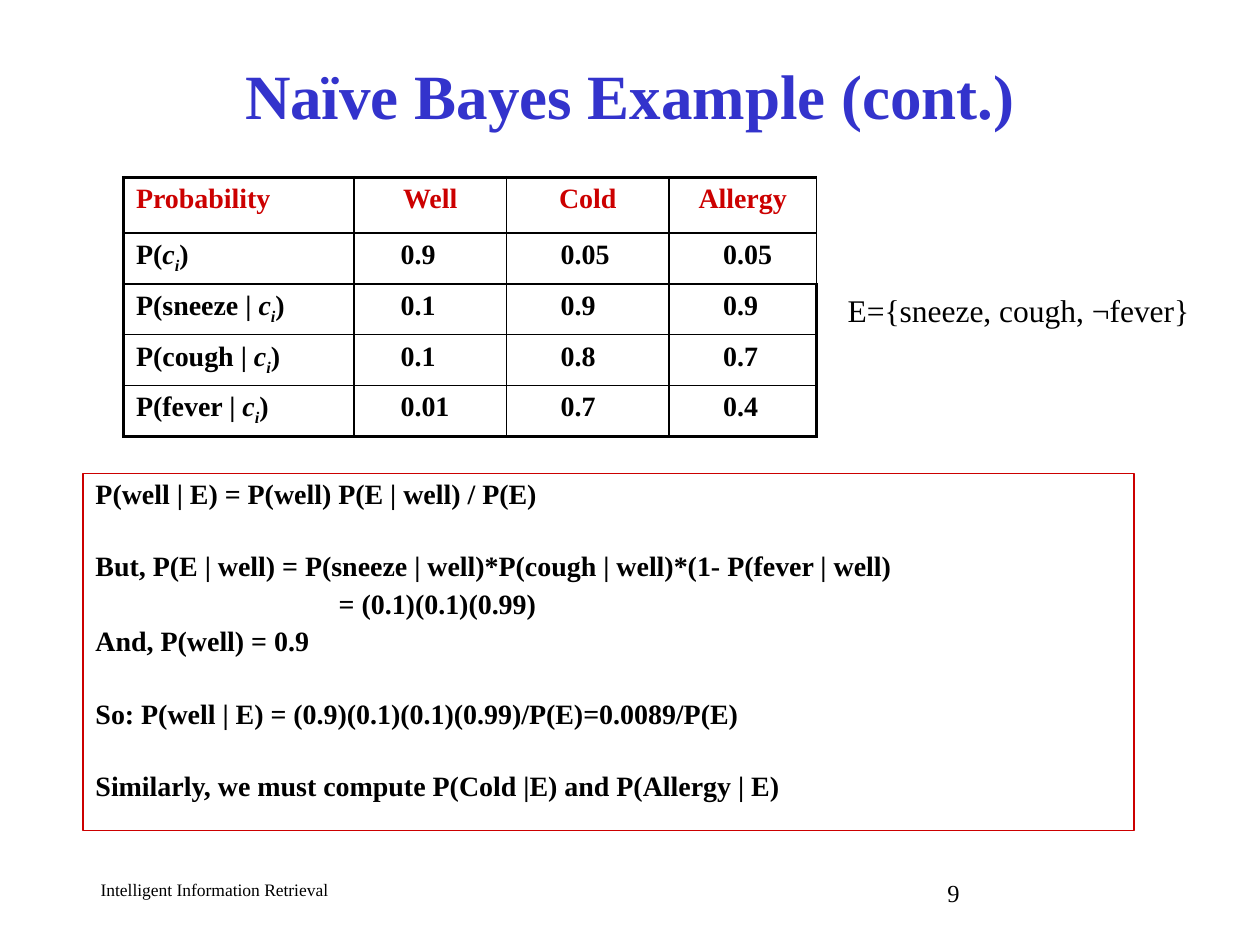
from lxml import etree
from pptx import Presentation
from pptx.dml.color import RGBColor
from pptx.enum.shapes import MSO_SHAPE
from pptx.enum.text import MSO_ANCHOR, PP_ALIGN
from pptx.oxml.ns import qn
from pptx.util import Inches, Pt

RECTANGLE = MSO_SHAPE.RECTANGLE
TOP, MIDDLE = MSO_ANCHOR.TOP, MSO_ANCHOR.MIDDLE
LEFT, CENTER = PP_ALIGN.LEFT, PP_ALIGN.CENTER

FONT = "Times New Roman"
COLORS = {"text": "000000", "title": "3333CC", "accent": "CC0000"}
BODY_SIZE = 16
THIN, THICK = 1, 2.25

COLUMN_WIDTHS = [1.83, 1.21, 1.29, 1.17]
ROW_HEIGHTS = [0.44, 0.38, 0.38, 0.38, 0.39]
VALUE_INSETS = [0.37, 0.43, 0.43]
HEADERS = ["Probability", "Well", "Cold", "Allergy"]
PROBABILITIES = [
    ("P(", ["0.9", "0.05", "0.05"]),
    ("P(sneeze | ", ["0.1", "0.9", "0.9"]),
    ("P(cough | ", ["0.1", "0.8", "0.7"]),
    ("P(fever | ", ["0.01", "0.7", "0.4"]),
]

# Each line: text, left indent in inches, space before in points
LINE_GAP, BLOCK_GAP = 3.9, 24.4
DERIVATION = [
    ("P(well | E) = P(well) P(E | well) / P(E)", 0, 0),
    ("But, P(E | well) = P(sneeze | well)*P(cough | well)*(1- P(fever | well)", 0, BLOCK_GAP),
    ("= (0.1)(0.1)(0.99)", 1.93, LINE_GAP),
    ("And, P(well) = 0.9", 0, LINE_GAP),
    ("So: P(well | E) = (0.9)(0.1)(0.1)(0.99)/P(E)=0.0089/P(E)", 0, BLOCK_GAP),
    ("Similarly, we must compute P(Cold |E) and P(Allergy | E)", 0, BLOCK_GAP),
]


def add_run(paragraph, text, size, color="text", bold=False, italic=False, baseline=None):
    run = paragraph.add_run()
    run.text = text
    font = run.font
    font.name, font.size, font.bold, font.italic = FONT, Pt(size), bold, italic
    font.color.rgb = RGBColor.from_string(COLORS[color])
    if baseline is not None:
        font._element.set("baseline", str(baseline * 1000))


def add_label(slide, box, text, size, color="text", bold=False,
              align=LEFT, anchor=TOP, wrap=True):
    shape = slide.shapes.add_textbox(*map(Inches, box))
    frame = shape.text_frame
    frame.word_wrap = wrap
    frame.vertical_anchor = anchor
    paragraph = frame.paragraphs[0]
    paragraph.alignment = align
    add_run(paragraph, text, size, color, bold)


def set_borders(cell, widths):
    """Draw the cell edges; widths maps L, R, T and B to points."""
    properties = cell._tc.get_or_add_tcPr()
    for side, width in widths.items():
        line = etree.SubElement(properties, qn(f"a:ln{side}"), w=str(Pt(width)))
        fill = etree.SubElement(line, qn("a:solidFill"))
        etree.SubElement(fill, qn("a:srgbClr"), val=COLORS["text"])


def add_probability_table(slide, box):
    rows, columns = len(ROW_HEIGHTS), len(COLUMN_WIDTHS)
    table = slide.shapes.add_table(rows, columns, *map(Inches, box)).table
    for column, width in zip(table.columns, COLUMN_WIDTHS):
        column.width = Inches(width)
    for row, height in zip(table.rows, ROW_HEIGHTS):
        row.height = Inches(height)

    for column, header in enumerate(HEADERS):
        paragraph = table.cell(0, column).text_frame.paragraphs[0]
        paragraph.alignment = CENTER if column else LEFT
        add_run(paragraph, header, BODY_SIZE, "accent", bold=True)

    for row, (prefix, values) in enumerate(PROBABILITIES, start=1):
        paragraph = table.cell(row, 0).text_frame.paragraphs[0]
        add_run(paragraph, prefix, BODY_SIZE, bold=True)
        add_run(paragraph, "c", BODY_SIZE, bold=True, italic=True)
        add_run(paragraph, "i", BODY_SIZE, bold=True, italic=True, baseline=-25)
        add_run(paragraph, ")", BODY_SIZE, bold=True)
        for column, value in enumerate(values, start=1):
            cell = table.cell(row, column)
            cell.margin_left = Inches(VALUE_INSETS[column - 1])
            add_run(cell.text_frame.paragraphs[0], value, BODY_SIZE, bold=True)

    for row in range(rows):
        for column in range(columns):
            cell = table.cell(row, column)
            thick_right = column == columns - 1 and row > 1
            set_borders(cell, {
                "L": THIN if column else THICK,
                "R": THICK if thick_right else THIN,
                "T": THIN if row else THICK,
                "B": THICK if row == rows - 1 else THIN,
            })
            cell.fill.background()


def add_derivation(slide, box):
    shape = slide.shapes.add_shape(RECTANGLE, *map(Inches, box))
    shape.shadow.inherit = False
    shape.fill.background()
    shape.line.color.rgb = RGBColor.from_string(COLORS["accent"])
    shape.line.width = Pt(0.75)
    frame = shape.text_frame
    frame.word_wrap = True
    frame.vertical_anchor = TOP
    for index, (text, indent, space_before) in enumerate(DERIVATION):
        paragraph = frame.add_paragraph() if index else frame.paragraphs[0]
        paragraph.alignment = LEFT
        paragraph.line_spacing = 0.9
        paragraph.space_before = Pt(space_before)
        paragraph._p.get_or_add_pPr().set("marL", str(Inches(indent)))
        add_run(paragraph, text, BODY_SIZE, bold=True)


def main():
    presentation = Presentation()
    presentation.slide_width, presentation.slide_height = Inches(10), Inches(7.5)
    slide = presentation.slides.add_slide(presentation.slide_layouts[6])
    add_label(slide, (0.7, 6.93, 3.75, 0.25), "Intelligent Information Retrieval", 10)
    add_label(slide, (7.42, 6.92, 2.08, 0.25), "9", 14)
    add_label(slide, (0.75, 0.33, 8.5, 0.83), "Naïve Bayes Example (cont.)", 36,
              "title", bold=True, align=CENTER, anchor=MIDDLE)
    add_probability_table(slide, (0.98, 1.41, 5.5, 1.97))
    add_label(slide, (6.61, 2.26, 2.95, 0.4), "E={sneeze, cough, ¬fever}", 18,
              align=CENTER, wrap=False)
    add_derivation(slide, (0.66, 3.76, 8.34, 2.83))
    presentation.save("out.pptx")


if __name__ == "__main__":
    main()
